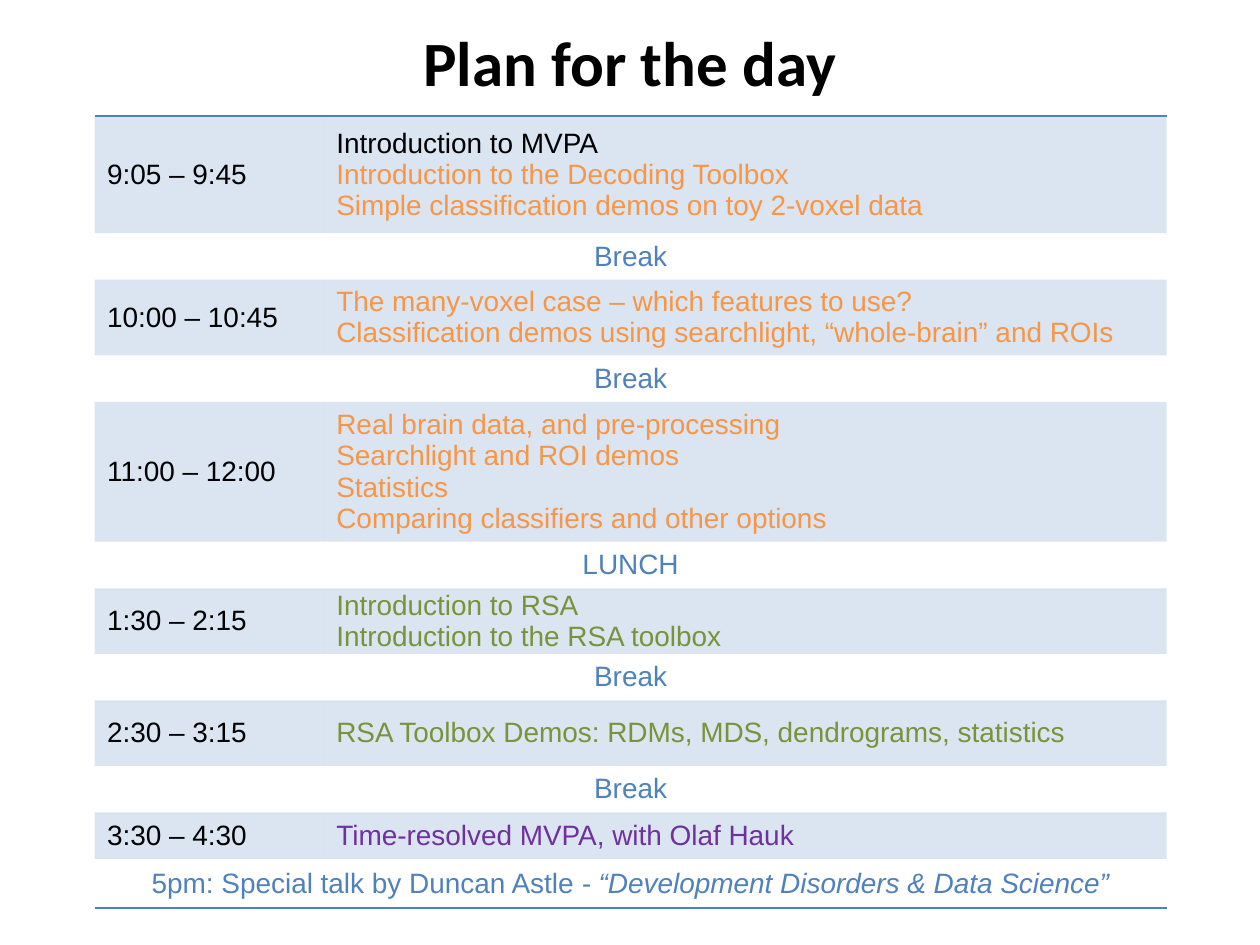
"""Builds the "Plan for the day" timetable slide."""
from lxml import etree
from pptx import Presentation
from pptx.dml.color import RGBColor
from pptx.enum.text import MSO_ANCHOR, PP_ALIGN
from pptx.oxml.ns import qn
from pptx.util import Inches, Pt

CENTER = PP_ALIGN.CENTER
LEFT = PP_ALIGN.LEFT
MIDDLE = MSO_ANCHOR.MIDDLE
PLAIN_TABLE_STYLE = "{2D5ABB26-0587-4C30-8999-92F81FD0307C}"
COLORS = {
    "black": "000000",
    "blue": "4F81BD",
    "orange": "F79646",
    "green": "77933C",
    "purple": "7030A0",
}
BREAK = (0.37, "", [("Break", "blue")])
SCHEDULE = [
    (0.93, "9:05 – 9:45", [
        ("Introduction to MVPA", "black"),
        ("Introduction to the Decoding Toolbox", "orange"),
        ("Simple classification demos on toy 2-voxel data", "orange"),
    ]),
    BREAK,
    (0.6, "10:00 – 10:45", [
        ("The many-voxel case – which features to use?", "orange"),
        ("Classification demos using searchlight, “whole-brain” and ROIs", "orange"),
    ]),
    BREAK,
    (1.11, "11:00 – 12:00", [
        ("Real brain data, and pre-processing", "orange"),
        ("Searchlight and ROI demos", "orange"),
        ("Statistics", "orange"),
        ("Comparing classifiers and other options", "orange"),
    ]),
    (0.37, "", [("LUNCH", "blue")]),
    (0.52, "1:30 – 2:15", [
        ("Introduction to RSA", "green"),
        ("Introduction to the RSA toolbox", "green"),
    ]),
    BREAK,
    (0.52, "2:30 – 3:15", [
        ("RSA Toolbox Demos: RDMs, MDS, dendrograms, statistics", "green"),
    ]),
    BREAK,
    (0.37, "3:30 – 4:30", [("Time-resolved MVPA, with Olaf Hauk", "purple")]),
    (0.39, "", [("5pm: Special talk by Duncan Astle", "blue")]),
]


def write_cell(cell, lines, alignment, shaded):
    """Fill a cell with coloured lines of text."""
    cell.vertical_anchor = MIDDLE
    cell.margin_left = cell.margin_right = Inches(0.1)
    cell.margin_top = cell.margin_bottom = 0
    cell.text = "\n".join(text for text, color in lines)
    for paragraph, (text, color) in zip(cell.text_frame.paragraphs, lines):
        paragraph.alignment = alignment
        paragraph.font.name = "Arial"
        paragraph.font.size = Pt(16)
        paragraph.font.color.rgb = RGBColor.from_string(COLORS[color])
    if shaded:
        cell.fill.solid()
        cell.fill.fore_color.rgb = RGBColor.from_string(COLORS["blue"])
        fill_color = cell._tc.tcPr.find(".//" + qn("a:srgbClr"))
        etree.SubElement(fill_color, qn("a:alpha"), val="20000")
    else:
        cell.fill.background()


def add_border(cell, side):
    """Draw a thin blue line along one side of a cell."""
    line = etree.Element(qn("a:" + side), w=str(Pt(1)))
    fill = etree.SubElement(line, qn("a:solidFill"))
    etree.SubElement(fill, qn("a:srgbClr"), val=COLORS["blue"])
    cell._tc.get_or_add_tcPr().insert(0, line)


presentation = Presentation()
presentation.slide_width = Inches(10)
presentation.slide_height = Inches(7.5)
slide = presentation.slides.add_slide(presentation.slide_layouts[5])

title = slide.shapes.title
title.left, title.top = Inches(0.5), Inches(0.3)
title.width, title.height = Inches(9), Inches(0.38)
title.text_frame.text = "Plan for the day"
title.text_frame.vertical_anchor = MIDDLE
heading = title.text_frame.paragraphs[0]
heading.alignment = CENTER
heading.font.name = "Calibri"
heading.font.size = Pt(36)
heading.font.bold = True
heading.font.color.rgb = RGBColor.from_string(COLORS["black"])

table = slide.shapes.add_table(
    len(SCHEDULE), 2, Inches(0.75), Inches(0.92), Inches(8.5), Inches(6.31)
).table
table.first_row = table.horz_banding = False
table._tbl.tblPr.find(qn("a:tableStyleId")).text = PLAIN_TABLE_STYLE
table.columns[0].width = Inches(1.82)
table.columns[1].width = Inches(6.69)

for index, (height, time, lines) in enumerate(SCHEDULE):
    table.rows[index].height = Inches(height)
    first, second = table.cell(index, 0), table.cell(index, 1)
    if time:
        write_cell(first, [(time, "black")], LEFT, True)
        write_cell(second, lines, LEFT, True)
    else:
        first.merge(second)
        write_cell(first, lines, CENTER, False)

talk = table.cell(len(SCHEDULE) - 1, 0).text_frame.paragraphs[0].add_run()
talk.text = " - “Development Disorders & Data Science”"
talk.font.italic = True

for column in range(2):
    add_border(table.cell(0, column), "lnT")
    add_border(table.cell(len(SCHEDULE) - 1, column), "lnB")

presentation.save("out.pptx")
